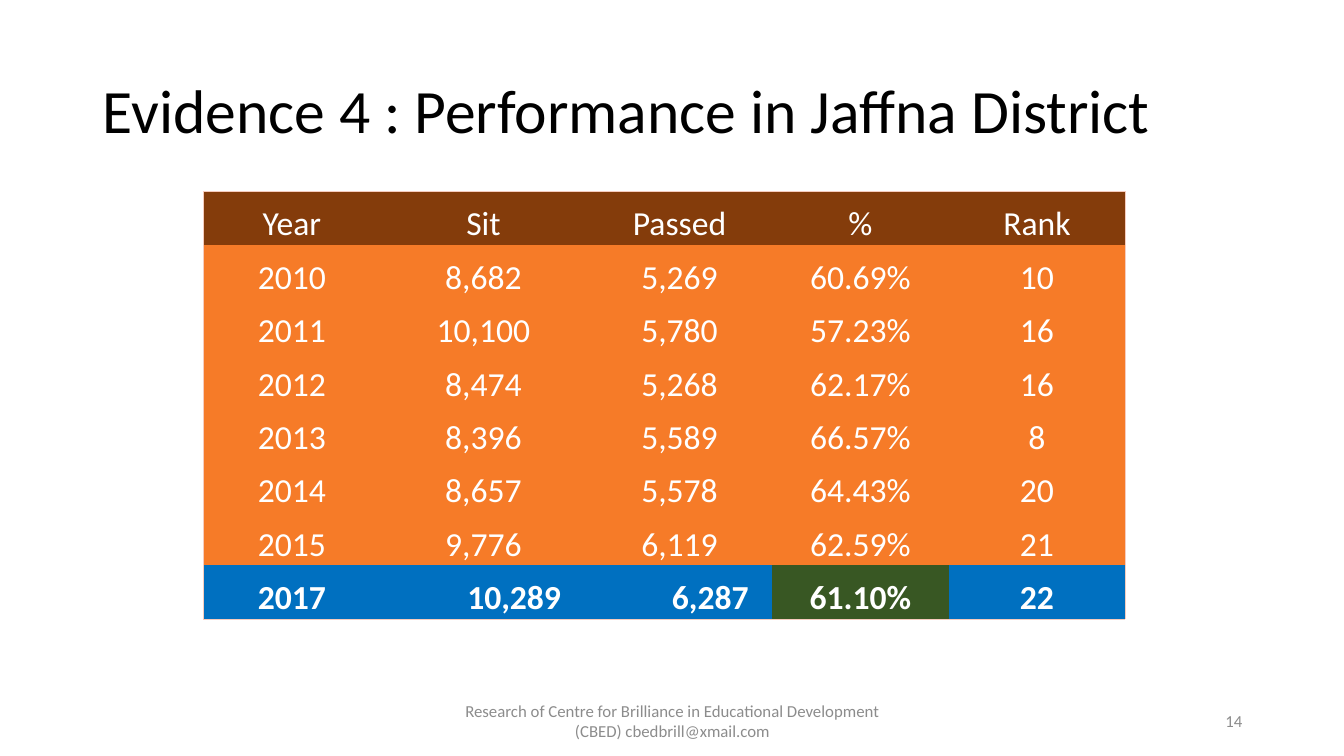
from itertools import accumulate

from lxml import etree
from pptx import Presentation
from pptx.dml.color import RGBColor
from pptx.enum.text import MSO_ANCHOR, MSO_AUTO_SIZE, PP_ALIGN
from pptx.oxml.ns import qn
from pptx.util import Inches, Pt

LEFT, CENTER, RIGHT = PP_ALIGN.LEFT, PP_ALIGN.CENTER, PP_ALIGN.RIGHT
MIDDLE, BOTTOM = MSO_ANCHOR.MIDDLE, MSO_ANCHOR.BOTTOM
NO_AUTOFIT = MSO_AUTO_SIZE.NONE
TITLE_ONLY_LAYOUT = 5
PLAIN_TABLE_STYLE = "{2D5ABB26-0587-4C30-8999-92F81FD0307C}"
COLORS = {
    "title": "000000",
    "footer": "8C8C8C",
    "cell_text": "FFFFFF",
    "header": "843C0B",
    "body": "F67B28",
    "latest": "0070C0",
    "latest_rate": "385723",
    "outline": "F6CCBE",
}
COLUMN_WIDTHS = [1.75, 2.05, 1.84, 1.75, 1.75]
ROW_HEIGHT = 0.53
LATEST_INDENT = 0.62
RATE_COLUMN = 3
RESULTS = [
    ["Year", "Sit", "Passed", "%", "Rank"],
    ["2010", "8,682", "5,269", "60.69%", "10"],
    ["2011", "10,100", "5,780", "57.23%", "16"],
    ["2012", "8,474", "5,268", "62.17%", "16"],
    ["2013", "8,396", "5,589", "66.57%", "8"],
    ["2014", "8,657", "5,578", "64.43%", "20"],
    ["2015", "9,776", "6,119", "62.59%", "21"],
    ["2017", "10,289", "6,287", "61.10%", "22"],
]


def apply(target, values):
    for name, value in values.items():
        setattr(target, name, value)


def write(frame, text, size, color, align, bold=False):
    paragraph = frame.paragraphs[0]
    paragraph.alignment = align
    run = paragraph.add_run()
    run.text = text
    apply(run.font, {"name": "Calibri", "size": Pt(size), "bold": bold})
    run.font.color.rgb = RGBColor.from_string(COLORS[color])
    return paragraph


def add_title(slide, left, top, width, height):
    title = slide.shapes.title
    apply(title, {"left": Inches(left), "top": Inches(top),
                  "width": Inches(width), "height": Inches(height)})
    apply(title.text_frame, {"vertical_anchor": MIDDLE, "word_wrap": True,
                             "auto_size": NO_AUTOFIT})
    heading = write(title.text_frame, "Evidence 4 : Performance in Jaffna District",
                    44, "title", LEFT)
    heading.line_spacing = 0.9


def add_footer_text(slide, text, align, left, top, width, height):
    footer = slide.shapes.add_textbox(Inches(left), Inches(top),
                                      Inches(width), Inches(height))
    apply(footer.text_frame, {"vertical_anchor": MIDDLE, "word_wrap": True,
                              "auto_size": NO_AUTOFIT})
    write(footer.text_frame, text, 12, "footer", align)


def outline_cell(tc, row, column, last_row, last_column):
    edges = {"a:lnL": column == 0, "a:lnR": column == last_column,
             "a:lnT": row == 0, "a:lnB": row == last_row}
    properties = tc.get_or_add_tcPr()
    for tag, is_outer in edges.items():
        if is_outer:
            line = etree.SubElement(properties, qn(tag), w=str(Pt(0.5)))
            fill = etree.SubElement(line, qn("a:solidFill"))
            etree.SubElement(fill, qn("a:srgbClr"), val=COLORS["outline"])


def cell_fill(row, column, last_row):
    if row == 0:
        return "header"
    if row == last_row:
        return "latest_rate" if column == RATE_COLUMN else "latest"
    return "body"


def add_results(slide, left, top):
    last_row, last_column = len(RESULTS) - 1, len(COLUMN_WIDTHS) - 1
    total_width = list(accumulate(COLUMN_WIDTHS))[-1]
    frame = slide.shapes.add_table(len(RESULTS), len(COLUMN_WIDTHS),
                                   Inches(left), Inches(top), Inches(total_width),
                                   Inches(ROW_HEIGHT * len(RESULTS)))
    results = frame.table
    apply(results, {"first_row": False, "horz_banding": False})
    next(frame.element.iter(qn("a:tableStyleId"))).text = PLAIN_TABLE_STYLE
    for column, width in zip(results.columns, COLUMN_WIDTHS):
        column.width = Inches(width)
    for table_row in results.rows:
        table_row.height = Inches(ROW_HEIGHT)
    for index, tc in enumerate(frame.element.iter(qn("a:tc"))):
        row, column = divmod(index, len(COLUMN_WIDTHS))
        is_latest = row == last_row
        indent = LATEST_INDENT if is_latest and column in (1, 2) else 0.01
        outline_cell(tc, row, column, last_row, last_column)
        cell = results.cell(row, column)
        apply(cell, {"margin_left": Inches(indent), "margin_right": Inches(0.01),
                     "margin_top": Inches(0.01), "margin_bottom": 0,
                     "vertical_anchor": BOTTOM})
        cell.fill.solid()
        cell.fill.fore_color.rgb = RGBColor.from_string(
            COLORS[cell_fill(row, column, last_row)])
        write(cell.text_frame, RESULTS[row][column], 24, "cell_text", CENTER, is_latest)


def main():
    deck = Presentation()
    apply(deck, {"slide_width": Inches(13.33), "slide_height": Inches(7.5)})
    slide = deck.slides.add_slide(deck.slide_layouts[TITLE_ONLY_LAYOUT])
    add_title(slide, 0.92, 0.4, 11.5, 1.45)
    add_footer_text(slide, "Research of Centre for Brilliance in Educational Development "
                    "(CBED) cbedbrill@xmail.com", CENTER, 4.42, 6.95, 4.5, 0.4)
    add_footer_text(slide, "14", RIGHT, 9.42, 6.95, 3, 0.4)
    add_results(slide, 2.02, 1.9)
    deck.save("out.pptx")


if __name__ == "__main__":
    main()
